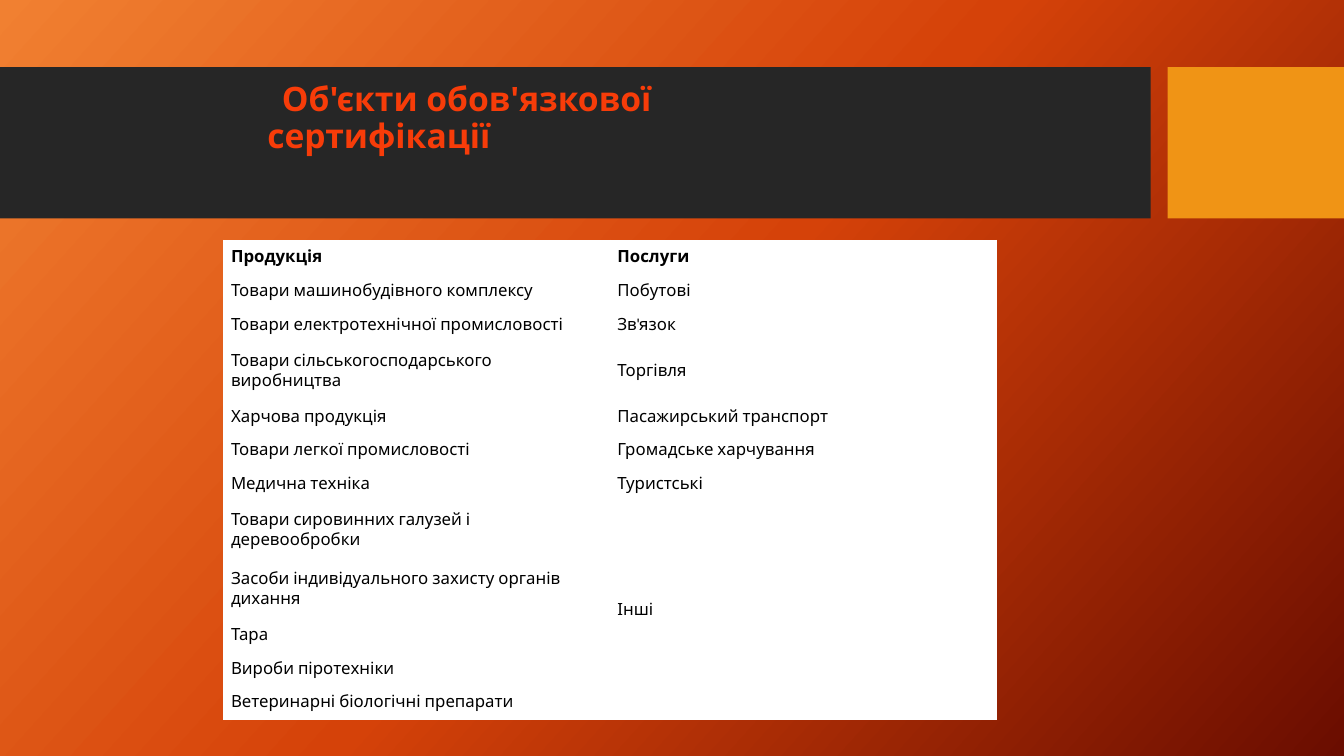
import dataclasses

import lxml.etree
import pptx
import pptx.dml.color
import pptx.enum.shapes
import pptx.enum.text
import pptx.oxml.ns
import pptx.presentation
import pptx.shapes.autoshape
import pptx.slide
import pptx.table
import pptx.util

RGBColor = pptx.dml.color.RGBColor
MIDDLE = pptx.enum.text.MSO_ANCHOR.MIDDLE

EMU_PER_PX = 9525
TITLE_ONLY = 5

CHARCOAL = RGBColor(0x26, 0x26, 0x26)
AMBER = RGBColor(0xF0, 0x94, 0x15)
RED_ORANGE = RGBColor(0xF7, 0x3C, 0x09)
BLACK = RGBColor(0, 0, 0)
WHITE = RGBColor(0xFF, 0xFF, 0xFF)
BACKGROUND_STOPS = {
    0: RGBColor(0xF1, 0x80, 0x31),
    50: RGBColor(0xD5, 0x42, 0x09),
    100: RGBColor(0x6A, 0x0D, 0x00),
}
BACKGROUND_ANGLE = 42

TITLE = "Об'єкти обов'язкової сертифікації"
HEADINGS = ("Продукція", "Послуги")
COLUMN_WIDTH = 368
ONE_LINE = 32
TWO_LINES = 56


@dataclasses.dataclass(frozen=True)
class Bar:
    left: int
    top: int
    width: int
    height: int
    colour: RGBColor


@dataclasses.dataclass(frozen=True)
class Entry:
    product: str
    service: str = ""
    height: int = ONE_LINE


BARS = (
    Bar(0, 64, 1096, 144, CHARCOAL),
    Bar(1112, 64, 168, 144, AMBER),
)
ENTRIES = (
    Entry("Товари машинобудівного комплексу", "Побутові"),
    Entry("Товари електротехнічної промисловості", "Зв'язок"),
    Entry("Товари сільськогосподарського виробництва", "Торгівля", TWO_LINES),
    Entry("Харчова продукція", "Пасажирський транспорт"),
    Entry("Товари легкої промисловості", "Громадське харчування"),
    Entry("Медична техніка", "Туристські"),
    Entry("Товари сировинних галузей і деревообробки", "Інші", TWO_LINES),
    Entry("Засоби індивідуального захисту органів дихання", height=TWO_LINES),
    Entry("Тара"),
    Entry("Вироби піротехніки"),
    Entry("Ветеринарні біологічні препарати"),
)


def px(length: int) -> pptx.util.Emu:
    return pptx.util.Emu(length * EMU_PER_PX)


def paint_background(page: pptx.slide.Slide) -> None:
    fill = page.background.fill
    fill.gradient()
    fill.gradient_angle = 360 - BACKGROUND_ANGLE
    qn = pptx.oxml.ns.qn
    stops = page.element.find(".//" + qn("a:gsLst"))
    stops.clear()
    for percent, colour in BACKGROUND_STOPS.items():
        stop = lxml.etree.SubElement(stops, qn("a:gs"), pos=str(percent * 1000))
        lxml.etree.SubElement(stop, qn("a:srgbClr"), val=str(colour))


def add_bar(page: pptx.slide.Slide, bar: Bar) -> None:
    shape = page.shapes.add_shape(
        pptx.enum.shapes.MSO_SHAPE.RECTANGLE,
        px(bar.left), px(bar.top), px(bar.width), px(bar.height),
    )
    shape.shadow.inherit = False
    shape.fill.solid()
    shape.fill.fore_color.rgb = bar.colour
    shape.line.fill.background()


def add_span(para, text: str, font: str, size: int, colour: RGBColor, bold: bool) -> None:
    span = para.add_run()
    span.text = text
    span.font.name = font
    span.font.size = pptx.util.Pt(size)
    span.font.color.rgb = colour
    span.font.bold = bold


def place_title(page: pptx.slide.Slide) -> None:
    """Fill the title placeholder and bring it in front of the bars."""
    title = page.shapes.title
    title.left, title.top = px(245), px(79)
    title.width, title.height = px(580), px(118)
    frame = title.text_frame
    frame.word_wrap = True
    frame.auto_size = pptx.enum.text.MSO_AUTO_SIZE.NONE
    frame.vertical_anchor = pptx.enum.text.MSO_ANCHOR.TOP
    frame.margin_top = frame.margin_bottom = 0
    para = frame.paragraphs[0]
    para.alignment = pptx.enum.text.PP_ALIGN.LEFT
    para.line_spacing = 0.9
    para._p.get_or_add_pPr().set("indent", str(px(14)))
    add_span(para, TITLE, "Open Sans", 24, RED_ORANGE, True)
    title.element.getparent().append(title.element)


def fill_cell(cell: pptx.table._Cell, text: str, bold: bool) -> None:
    cell.fill.solid()
    cell.fill.fore_color.rgb = WHITE
    cell.vertical_anchor = MIDDLE
    cell.margin_left = cell.margin_right = px(7)
    cell.margin_top = cell.margin_bottom = px(3)
    if text:
        add_span(cell.text_frame.paragraphs[0], text, "Karla", 12, BLACK, bold)


def add_certification_table(page: pptx.slide.Slide) -> None:
    rows = (Entry(*HEADINGS), *ENTRIES)
    table = page.shapes.add_table(
        len(rows), len(HEADINGS), px(213), px(229),
        px(COLUMN_WIDTH * len(HEADINGS)), px(sum(row.height for row in rows)),
    ).table
    table.first_row = False
    table.horz_banding = False
    for column in table.columns:
        column.width = px(COLUMN_WIDTH)
    for index, row in enumerate(rows):
        table.rows[index].height = px(row.height)
        for column, text in enumerate((row.product, row.service)):
            fill_cell(table.cell(index, column), text, bold=index == 0)
    last_service = max(index for index, row in enumerate(rows) if row.service)
    table.cell(last_service, 1).merge(table.cell(len(rows) - 1, 1))


def main() -> None:
    deck = pptx.Presentation()
    deck.slide_width, deck.slide_height = px(1280), px(720)
    page = deck.slides.add_slide(deck.slide_layouts[TITLE_ONLY])
    paint_background(page)
    for bar in BARS:
        add_bar(page, bar)
    add_certification_table(page)
    place_title(page)
    deck.save("out.pptx")


if __name__ == "__main__":
    main()
